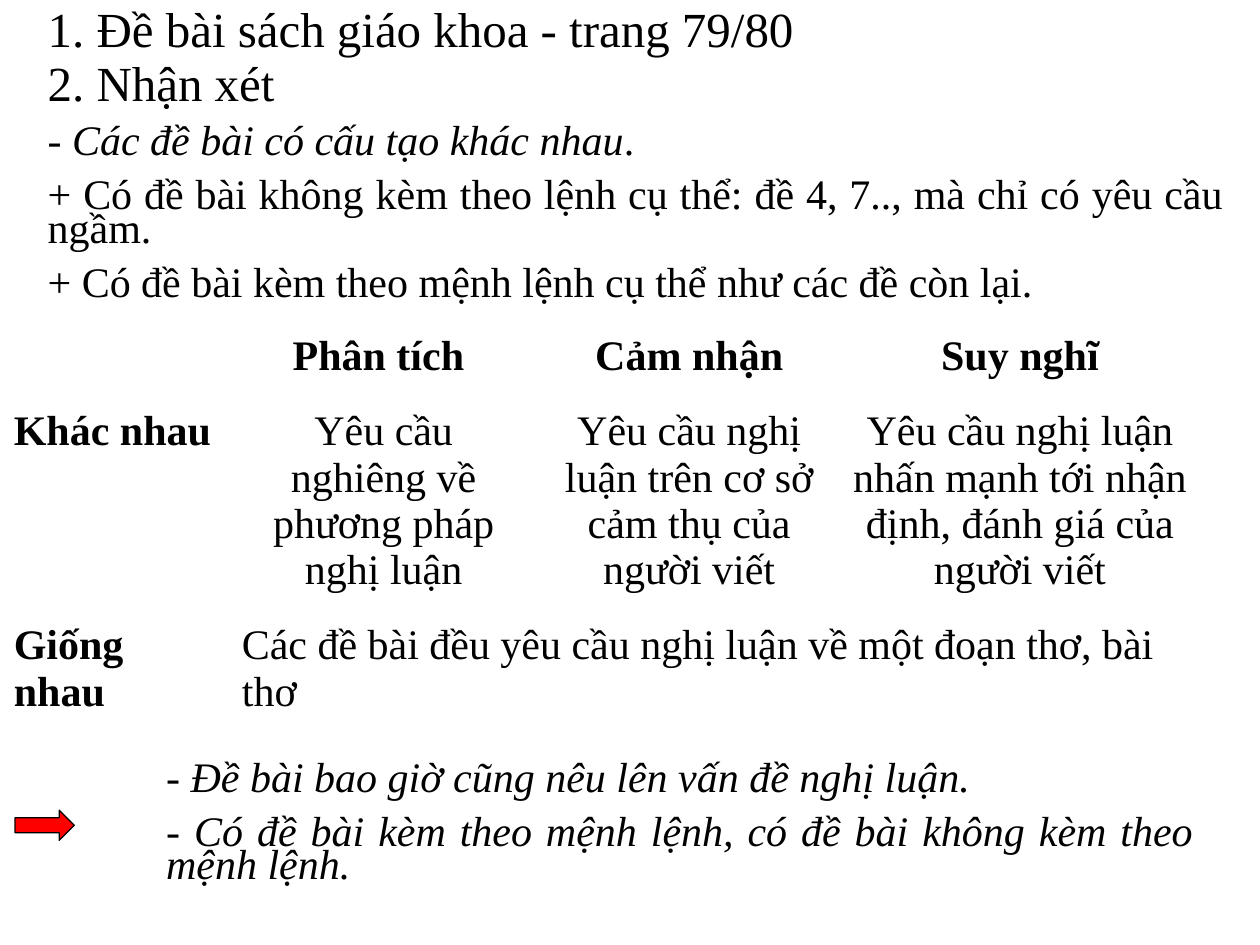
from dataclasses import dataclass

from pptx import Presentation
from pptx.dml.color import RGBColor
from pptx.enum.shapes import MSO_SHAPE
from pptx.enum.text import MSO_AUTO_SIZE, PP_ALIGN
from pptx.util import Inches, Pt


@dataclass(frozen=True)
class Theme:
    font: str = "Times New Roman"
    ink: RGBColor = RGBColor(0, 0, 0)
    accent: RGBColor = RGBColor(255, 0, 0)
    heading: int = 28
    body: int = 24
    leading: int = 19
    gap: int = 12
    outline: float = 0.75


def add_run(p, text, *, theme, size, bold=False, italic=False):
    r = p.add_run()
    r.text = text
    font = r.font
    font.name, font.size = theme.font, Pt(size)
    font.bold, font.italic = bold, italic
    font.color.rgb = theme.ink


class SlideBuilder:
    """Places elements on a grid of 100 columns by 75 rows."""

    COLS, ROWS = 100, 75

    def __init__(self, prs, theme):
        self.theme = theme
        self.s = prs.slides.add_slide(prs.slide_layouts[6])
        self.col = prs.slide_width / self.COLS
        self.row = prs.slide_height / self.ROWS

    def box(self, x, y, w, h):
        return (round(x * self.col), round(y * self.row),
                round(w * self.col), round(h * self.row))

    def text(self, place, paragraphs, size):
        """Each paragraph is a list of (text, italic) pairs."""
        tf = self.s.shapes.add_textbox(*self.box(*place)).text_frame
        tf.word_wrap = True
        tf.auto_size = MSO_AUTO_SIZE.SHAPE_TO_FIT_TEXT
        for i, runs in enumerate(paragraphs):
            p = tf.add_paragraph() if i else tf.paragraphs[0]
            p.alignment = PP_ALIGN.JUSTIFY
            p.line_spacing = Pt(self.theme.leading)
            p.space_before = Pt(self.theme.gap)
            for text, italic in runs:
                add_run(p, text, theme=self.theme, size=size, italic=italic)

    def table(self, x, y, widths, heights, rows):
        """Bold first row and column; a short last row spans the rest."""
        place = self.box(x, y, sum(widths), sum(heights))
        table = self.s.shapes.add_table(len(heights), len(widths), *place).table
        for column, width in zip(table.columns, widths):
            column.width = round(width * self.col)
        for row, height in zip(table.rows, heights):
            row.height = round(height * self.row)
        for cell in table.iter_cells():
            cell.fill.background()
            cell.margin_left = cell.margin_right = Inches(0.07)
            cell.margin_top = cell.margin_bottom = Inches(0.05)
        for i, texts in enumerate(rows):
            spans = len(texts) < len(widths)
            if spans:
                table.cell(i, len(texts) - 1).merge(table.cell(i, len(widths) - 1))
            for j, text in enumerate(texts):
                if not text:
                    continue
                p = table.cell(i, j).text_frame.paragraphs[0]
                p.alignment = PP_ALIGN.LEFT if j == 0 or spans else PP_ALIGN.CENTER
                add_run(p, text, theme=self.theme, size=self.theme.body,
                        bold=i == 0 or j == 0)

    def arrow(self, place):
        sp = self.s.shapes.add_shape(MSO_SHAPE.RIGHT_ARROW, *self.box(*place))
        sp.shadow.inherit = False
        sp.fill.solid()
        sp.fill.fore_color.rgb = self.theme.accent
        sp.line.color.rgb = self.theme.ink
        sp.line.width = Pt(self.theme.outline)


def main():
    prs = Presentation()
    prs.slide_width, prs.slide_height = Inches(10), Inches(7.5)
    theme = Theme()
    slide = SlideBuilder(prs, theme)

    slide.text((2.8, 1.4, 75, 7.9), [
        [("1. Đề bài sách giáo khoa - trang 79/80", False)],
        [("2. Nhận xét", False)],
    ], theme.heading)
    slide.text((2.8, 9.9, 95.3, 15), [
        [("-", False), (" Các đề bài có cấu tạo khác nhau", True), (".", False)],
        [("+ Có đề bài không kèm theo lệnh cụ thể: đề 4, 7.., "
          "mà chỉ có yêu cầu ngầm.", False)],
        [("+ Có đề bài kèm theo mệnh lệnh cụ thể như các đề còn lại.", False)],
    ], theme.body)
    slide.table(0.4, 25.9, (18.1, 23.9, 24.6, 27.9), (6, 13, 6), [
        ["", "Phân tích ", "Cảm nhận", "Suy nghĩ"],
        ["Khác nhau",
         "Yêu cầu nghiêng về phương pháp nghị luận",
         "Yêu cầu nghị luận trên cơ sở cảm thụ của người viết",
         "Yêu cầu nghị luận nhấn mạnh tới nhận định, đánh giá của người viết"],
        ["Giống nhau",
         "Các đề bài đều yêu cầu nghị luận về một đoạn thơ, bài thơ"],
    ])
    slide.text((12.2, 60.4, 83.5, 10.7), [
        [("- Đề bài bao giờ cũng nêu lên vấn đề nghị luận.", True)],
        [("- Có đề bài kèm theo mệnh lệnh, có đề bài không kèm theo "
          "mệnh lệnh.", True)],
    ], theme.body)
    slide.arrow((1.2, 64.3, 4.7, 2.4))

    prs.save("out.pptx")


if __name__ == "__main__":
    main()
